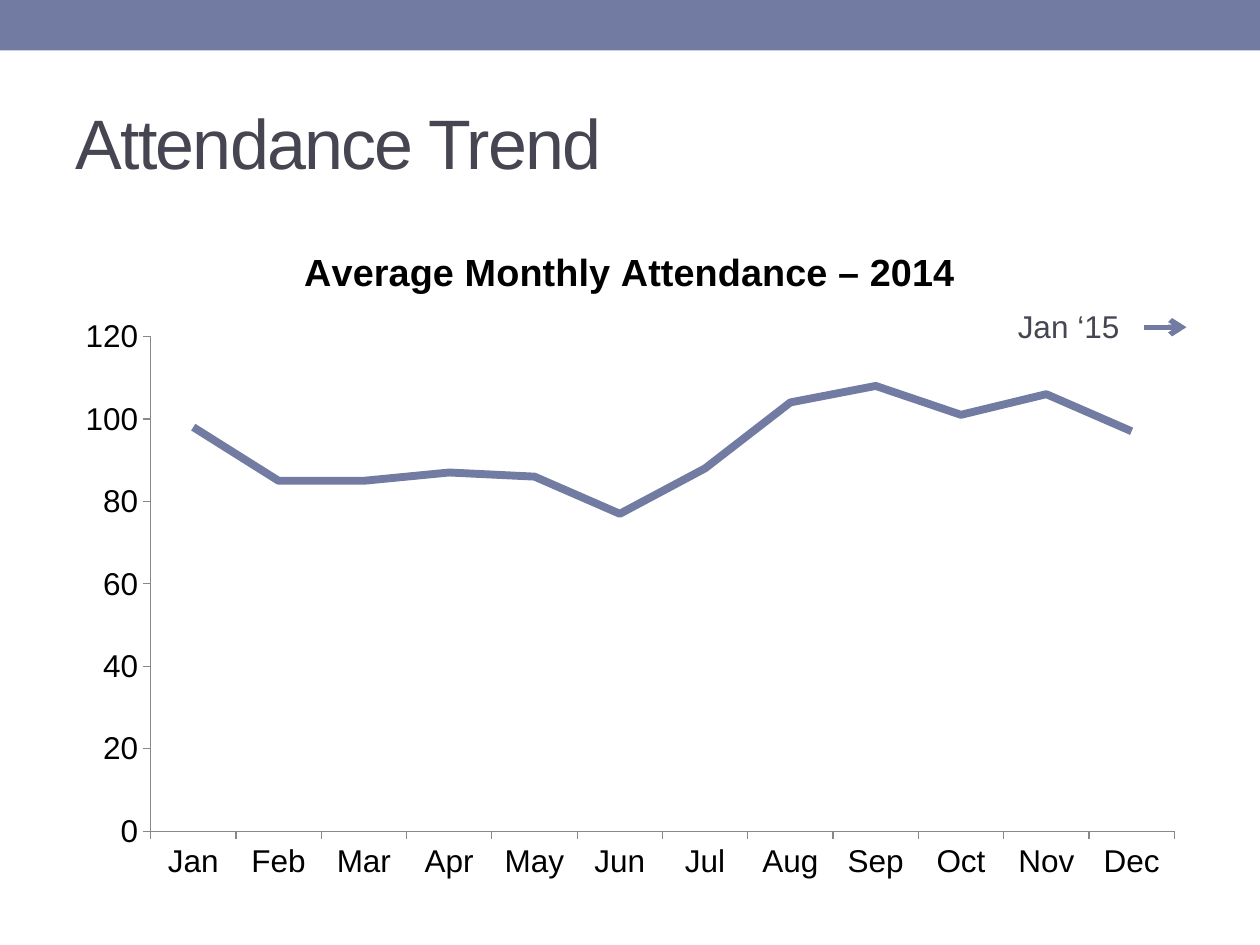
"""Build the attendance trend slide with its monthly line chart."""
import lxml.etree
import pptx
import pptx.chart.data
import pptx.dml.color
import pptx.enum.chart
import pptx.enum.shapes
import pptx.enum.text
import pptx.oxml.ns
import pptx.util

Pt = pptx.util.Pt
qn = pptx.oxml.ns.qn
COLORS = {"accent": "727CA3", "text": "464653", "chart": "000000", "axis": "888888"}
MONTHS = ["Jan", "Feb", "Mar", "Apr", "May", "Jun",
          "Jul", "Aug", "Sep", "Oct", "Nov", "Dec"]
ATTENDANCE = [98, 85, 85, 87, 86, 77, 88, 104, 108, 101, 106, 97]


def rgb(name):
    return pptx.dml.color.RGBColor.from_string(COLORS[name])


def style_font(font, size, color, bold=False):
    font.name = "Arial"
    font.size = Pt(size)
    font.bold = bold
    font.color.rgb = rgb(color)


deck = pptx.Presentation()
deck.slide_width, deck.slide_height = Pt(720), Pt(540)
page = deck.slides.add_slide(deck.slide_layouts[5])

band = page.shapes.add_shape(
    pptx.enum.shapes.MSO_SHAPE.RECTANGLE, Pt(0), Pt(0), Pt(720), Pt(28.8))
band.shadow.inherit = False
band.fill.solid()
band.fill.fore_color.rgb = rgb("accent")
band.line.fill.background()

title = page.shapes.title
title.left, title.top, title.width, title.height = Pt(36), Pt(42), Pt(648), Pt(78)
title.text_frame.text = "Attendance Trend"
title.text_frame.vertical_anchor = pptx.enum.text.MSO_ANCHOR.MIDDLE
heading = title.text_frame.paragraphs[0]
heading.alignment = pptx.enum.text.PP_ALIGN.LEFT
style_font(heading.runs[0].font, 40, "text")
heading.runs[0].font._element.set("spc", "-100")

data = pptx.chart.data.CategoryChartData()
data.categories = MONTHS
data.add_series("Series 1", ATTENDANCE)
chart = page.shapes.add_chart(
    pptx.enum.chart.XL_CHART_TYPE.LINE,
    Pt(36), Pt(126), Pt(648), Pt(384), data).chart
style_font(chart.font, 18, "chart")
chart.has_legend = False
chart.has_title = True
chart.chart_title.include_in_layout = False
chart.chart_title.text_frame.text = "Average Monthly Attendance – 2014"
caption = chart.chart_title.text_frame.paragraphs[0]
style_font(caption.runs[0].font, 21.6, "chart", bold=True)

trend = chart.plots[0].series[0]
trend.smooth = False
trend.marker.style = pptx.enum.chart.XL_MARKER_STYLE.NONE
trend.format.line.width = Pt(4.5)
trend.format.line.color.rgb = rgb("accent")

for axis in (chart.category_axis, chart.value_axis):
    axis.has_major_gridlines = False
    axis.major_tick_mark = pptx.enum.chart.XL_TICK_MARK.OUTSIDE
    axis.minor_tick_mark = pptx.enum.chart.XL_TICK_MARK.NONE
    axis.format.line.width = Pt(0.75)
    axis.format.line.color.rgb = rgb("axis")
chart.value_axis.minimum_scale = 0
chart.value_axis.maximum_scale = 120
chart.value_axis.major_unit = 20

group = page.shapes.add_group_shape()
arrow = group.shapes.add_connector(
    pptx.enum.shapes.MSO_CONNECTOR.STRAIGHT, Pt(653.5), Pt(187), Pt(678), Pt(187))
arrow.line.width = Pt(3)
arrow.line.color.rgb = rgb("accent")
lxml.etree.SubElement(arrow.line._get_or_add_ln(), qn("a:tailEnd"), type="arrow")
lxml.etree.SubElement(arrow._element.spPr, qn("a:effectLst"))

label = group.shapes.add_textbox(Pt(574.5), Pt(172), Pt(73.5), Pt(31.5))
label.text_frame.word_wrap = False
label.text_frame.auto_size = pptx.enum.text.MSO_AUTO_SIZE.SHAPE_TO_FIT_TEXT
label.text_frame.text = "Jan ‘15"
style_font(label.text_frame.paragraphs[0].runs[0].font, 18, "text")

deck.save("out.pptx")
